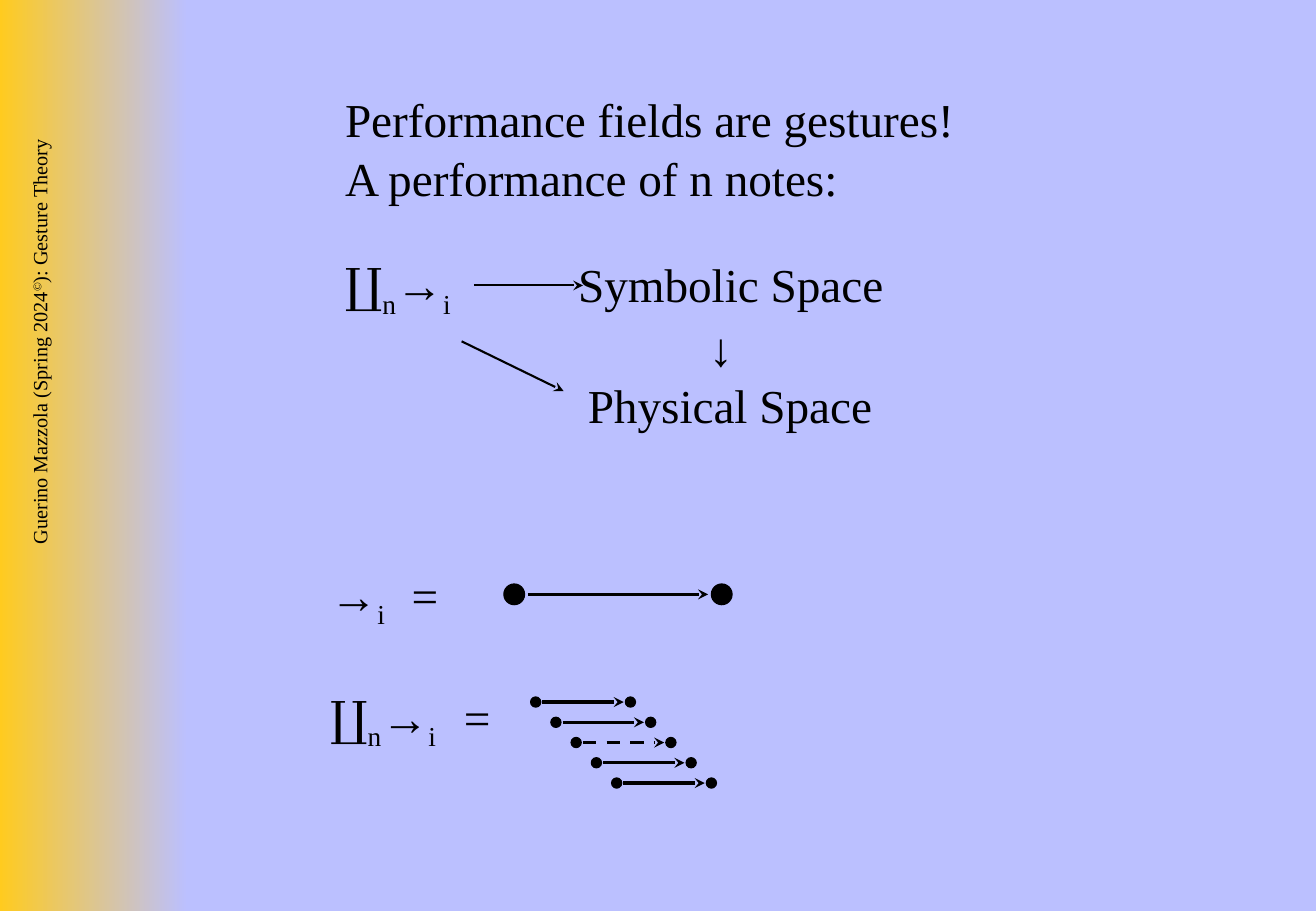
from pptx import Presentation
from pptx.dml.color import RGBColor
from pptx.enum.dml import MSO_LINE as Dash
from pptx.enum.shapes import MSO_CONNECTOR as Link, MSO_SHAPE as Form
from pptx.enum.text import MSO_ANCHOR as Anchor, PP_ALIGN as Align
from pptx.oxml.ns import qn
from pptx.util import Inches, Pt
from lxml.etree import SubElement as Sub

COLS, ROWS = 65, 45
CELL = Inches(1 / 6)


def color(code):
    return RGBColor.from_string(code)


class Sheet:
    """One slide on a grid of 65 columns by 45 rows."""
    font = "Times New Roman"
    ink = color("000000")

    def __init__(self, deck, paper):
        self.slide = deck.slides.add_slide(deck.slide_layouts[5])
        self.shapes = self.slide.shapes
        fill = self.slide.background.fill
        fill.solid()
        fill.fore_color.rgb = color(paper)

    def cells(self, *nums):
        return [round(n * CELL) for n in nums]

    def band(self, width, start, end):
        rect = self.shapes.add_shape(Form.RECTANGLE, *self.cells(0, 0, width, ROWS))
        rect.shadow.inherit = False
        rect.line.fill.background()
        rect.fill.gradient()
        rect.fill.gradient_angle = 0
        for stop, code, pos in zip(rect.fill.gradient_stops, (start, end), (0, 1)):
            stop.color.rgb = color(code)
            stop.position = pos

    def typeset(self, box, lines, size=28, align=Align.LEFT, tabs=(), gap=0, lead=None):
        """Each line is a list of (text, baseline percent) runs."""
        frame = box.text_frame
        frame.word_wrap = True
        frame.vertical_anchor = Anchor.TOP
        for num, runs in enumerate(lines):
            par = frame.add_paragraph() if num else frame.paragraphs[0]
            par.alignment = align
            par.space_before = Pt(gap if num else 0)
            par.line_spacing = lead
            if tabs:
                stops = Sub(par._p.get_or_add_pPr(), qn("a:tabLst"))
                for pos in tabs[num]:
                    Sub(stops, qn("a:tab"), pos=str(Inches(pos)), algn="l")
            par.font.name, par.font.size = self.font, Pt(size)
            par.font.color.rgb = self.ink
            for words, base in runs:
                run = par.add_run()
                run.text = words
                if base:
                    run._r.get_or_add_rPr().set("baseline", str(base * 1000))

    def title(self, place, lines, **style):
        box = self.shapes.title
        box.left, box.top, box.width, box.height = self.cells(*place)
        self.typeset(box, lines, **style)

    def text(self, place, lines, turn=0, **style):
        box = self.shapes.add_textbox(*self.cells(*place))
        box.rotation = turn
        self.typeset(box, lines, **style)

    def arrow(self, start, end, width=1.25, dash=None, host=None):
        link = (host or self.shapes).add_connector(
            Link.STRAIGHT, *self.cells(*start, *end))
        link.line.color.rgb = self.ink
        link.line.width = Pt(width)
        if dash:
            link.line.dash_style = dash
        Sub(link.get_or_add_ln(), qn("a:tailEnd"), type="stealth")
        Sub(link._element.spPr, qn("a:effectLst"))

    def note(self, left, right, row, size, dash=None):
        """Two dots, given by their centres, with an arrow between them."""
        host = self.shapes.add_group_shape().shapes
        gap = 0.66 * size
        self.arrow((left + gap, row), (right - gap, row), 2, dash, host)
        for col in (left, right):
            dot = host.add_shape(
                Form.OVAL, *self.cells(col - size / 2, row - size / 2, size, size))
            dot.shadow.inherit = False
            dot.fill.solid()
            dot.fill.fore_color.rgb = dot.line.color.rgb = self.ink
            dot.line.width = Pt(0.75)


def main():
    deck = Presentation()
    deck.slide_width, deck.slide_height = COLS * CELL, ROWS * CELL
    page = Sheet(deck, "BBC0FF")
    page.band(9.25, "FFCB1F", "BBC0FF")
    page.text((-14.4, 21.75, 33.9, 3),
              [[("Guerino Mazzola (Spring 2024", 0), ("©", 30), ("): Gesture Theory", 0)]],
              turn=270, size=12, align=Align.RIGHT)
    page.title((16.44, 4, 32.1, 6),
               [[("Performance fields are gestures!", 0)],
                [("A performance of n notes:", 0)]], lead=1.05)

    arc = [("→", 0), ("i", -25)]
    sum_n = [("∐", 0), ("n", -25)] + arc
    page.text((16.44, 12.3, 32.1, 9.3),
              [sum_n + [("\tSymbolic Space", 0)], [("\t↓", 0)], [("\tPhysical Space", 0)]],
              tabs=((1.92,), (3,), (2,)))
    page.arrow((22.8, 16.86), (27.84, 19.32))
    page.arrow((23.4, 14.1), (28.8, 14.1))

    page.text((15.72, 27.66, 9.6, 9.06),
              [arc + [("\t=", 0)], sum_n + [("\t=", 0)]],
              tabs=((0.67,), (1.1,)), gap=34)
    page.note(25.4, 35.65, 29.36, 1.02)
    for step in range(5):
        page.note(26.46 + step, 31.14 + step, 34.68 + step, 0.5,
                  Dash.DASH if step == 2 else None)
    deck.save("out.pptx")


if __name__ == "__main__":
    main()
